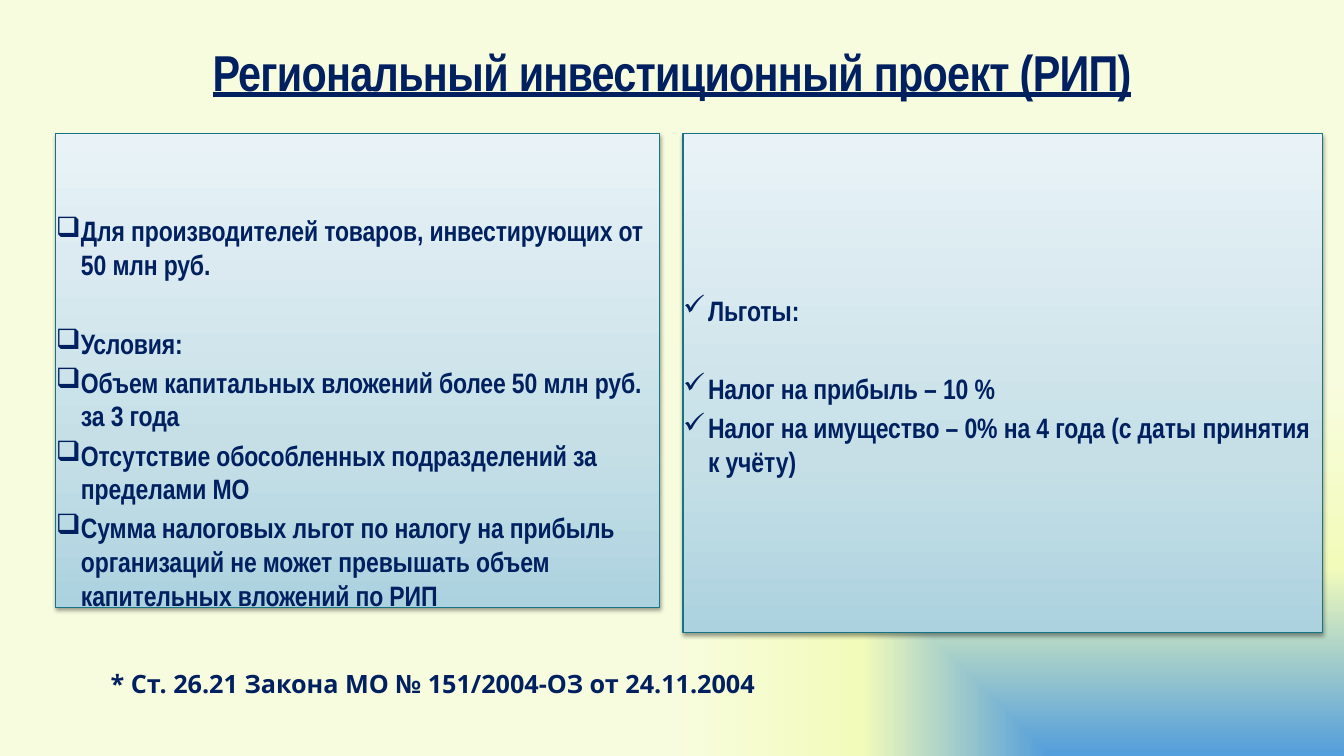
from lxml import etree
from pptx import Presentation
from pptx import util as u
from pptx.dml.color import RGBColor
from pptx.enum import shapes, text
from pptx.oxml import ns

NAVY = RGBColor(0x00, 0x20, 0x60)
TEAL = RGBColor(0x16, 0x74, 0x85)
PANEL_STOPS = [
    (0, RGBColor(0xAC, 0xD2, 0xDF)),
    (35, RGBColor(0xC6, 0xDF, 0xE7)),
    (100, RGBColor(0xE9, 0xF3, 0xF7)),
]
BACKGROUND_STOPS = [
    (0, RGBColor(0x52, 0x9D, 0xDB)),
    (50, RGBColor(0xF2, 0xFB, 0xBA)),
    (100, RGBColor(0xF8, 0xFC, 0xDE)),
]

TITLE = "Региональный инвестиционный проект (РИП)"
FOOTNOTE = "* Ст. 26.21 Закона МО № 151/2004-ОЗ от 24.11.2004"
NEAR, FAR = 4, 32
PANELS = [
    {
        "box": (56, 134, 604, 474), "top": 80, "bullet": "❑",
        "items": [
            ("Для производителей товаров, инвестирующих от 50 млн руб.", 0),
            ("Условия:", FAR),
            ("Объем капитальных вложений более 50 млн руб. за 3 года", NEAR),
            ("Отсутствие обособленных подразделений за пределами МО", NEAR),
            ("Сумма налоговых льгот по налогу на прибыль организаций "
             "не может превышать объем капительных вложений по РИП", NEAR),
        ],
    },
    {
        "box": (683, 134, 640, 499), "top": 159, "bullet": "✓",
        "items": [
            ("Льготы:", 0),
            ("Налог на прибыль – 10 %", FAR),
            ("Налог на имущество – 0% на 4 года (с даты принятия к учёту)", NEAR),
        ],
    },
]

SLIDE_WIDTH, SLIDE_HEIGHT = 1344, 756
SCALE = 12192000 / SLIDE_WIDTH
INDENT = 25


def px(length):
    return u.Emu(round(length * SCALE))


def add_element(parent, tag, **attributes):
    element = etree.SubElement(parent, ns.qn(tag))
    for name, value in attributes.items():
        element.set(name, str(value))
    return element


def set_gradient(fill, owner, stops):
    fill.gradient()
    gradient = next(owner.iter(ns.qn("a:gradFill")))
    for child in list(gradient):
        gradient.remove(child)
    stop_list = add_element(gradient, "a:gsLst")
    for position, color in stops:
        stop = add_element(stop_list, "a:gs", pos=position * 1000)
        add_element(stop, "a:srgbClr", val=color)
    return gradient


def set_margins(frame, top=0):
    frame.margin_left = frame.margin_right = frame.margin_bottom = 0
    frame.margin_top = px(top)


def write(paragraph, words, size, font="Arial Narrow", underline=False,
          spacing=0, align=text.PP_ALIGN.LEFT, before=0, line=None, bullet=None):
    paragraph.alignment = align
    paragraph.space_before = u.Pt(before)
    if line:
        paragraph.line_spacing = line
    if bullet:
        properties = paragraph._p.get_or_add_pPr()
        properties.set("marL", str(px(INDENT)))
        properties.set("indent", str(-px(INDENT)))
        bullet_color = add_element(properties, "a:buClr")
        add_element(bullet_color, "a:srgbClr", val=NAVY)
        add_element(properties, "a:buChar", char=bullet)
    run = paragraph.add_run()
    run.text = words
    run.font.name = font
    run.font.size = u.Pt(size)
    run.font.bold = True
    run.font.underline = underline
    run.font.color.rgb = NAVY
    if spacing:
        run._r.get_or_add_rPr().set("spc", str(spacing))


def add_text_box(slide, box):
    frame = slide.shapes.add_textbox(*map(px, box)).text_frame
    frame.word_wrap = True
    return frame


def add_panel(slide, box, top, bullet, items):
    shape = slide.shapes.add_shape(shapes.MSO_SHAPE.RECTANGLE, *map(px, box))
    properties = shape._element.spPr
    gradient = set_gradient(shape.fill, properties, PANEL_STOPS)
    add_element(gradient, "a:lin", ang=270 * 60000, scaled=0)
    shape.line.color.rgb = TEAL
    shape.line.width = u.Pt(0.75)
    shape.shadow.inherit = False
    effects = properties.find(ns.qn("a:effectLst"))
    shadow = add_element(effects, "a:outerShdw", blurRad=u.Pt(3.1),
                         dist=u.Pt(1.6), dir=90 * 60000, rotWithShape=0)
    shadow_color = add_element(shadow, "a:srgbClr", val="000000")
    add_element(shadow_color, "a:alpha", val=38000)

    frame = shape.text_frame
    frame.word_wrap = True
    frame.vertical_anchor = text.MSO_ANCHOR.TOP
    set_margins(frame, top)
    for index, (words, before) in enumerate(items):
        paragraph = frame.add_paragraph() if index else frame.paragraphs[0]
        write(paragraph, words, 20, spacing=-10, before=before, bullet=bullet)


def main():
    presentation = Presentation()
    presentation.slide_width = px(SLIDE_WIDTH)
    presentation.slide_height = px(SLIDE_HEIGHT)
    slide = presentation.slides.add_slide(presentation.slide_layouts[6])

    gradient = set_gradient(slide.background.fill, slide._element, BACKGROUND_STOPS)
    focus = add_element(gradient, "a:path", path="rect")
    add_element(focus, "a:fillToRect", l=100000, t=100000)

    title = add_text_box(slide, (101, 31, 1142, 90))
    title.vertical_anchor = text.MSO_ANCHOR.MIDDLE
    set_margins(title)
    write(title.paragraphs[0], TITLE, 36, underline=True, spacing=-50,
          align=text.PP_ALIGN.CENTER, line=0.86)

    for panel in PANELS:
        add_panel(slide, **panel)

    footnote = add_text_box(slide, (-54, 663, 974, 122))
    write(footnote.paragraphs[0], FOOTNOTE, 18, font="Open Sans",
          align=text.PP_ALIGN.CENTER)

    presentation.save("out.pptx")


if __name__ == "__main__":
    main()
